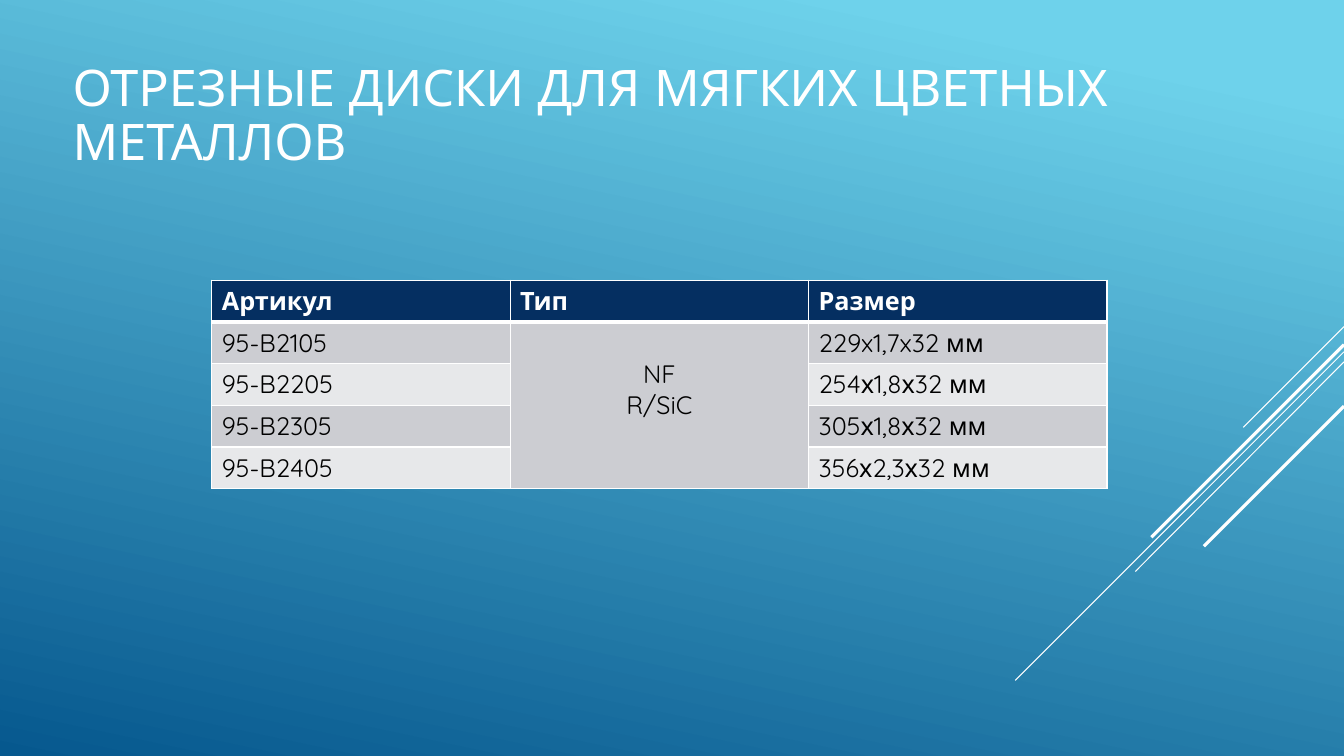
from dataclasses import dataclass

import lxml.etree
import pptx
import pptx.dml.color
import pptx.enum.dml
import pptx.enum.shapes
import pptx.enum.text
import pptx.oxml.ns
import pptx.util

Inches = pptx.util.Inches
Pt = pptx.util.Pt
qn = pptx.oxml.ns.qn


@dataclass(frozen=True)
class Theme:
    font: str = "Quicksand"
    white: str = "FFFFFF"
    black: str = "000000"
    sky: str = "6ED2EB"
    ocean: str = "06588E"
    header: str = "052F61"
    band_dark: str = "CCCDD2"
    band_light: str = "E7E8EA"
    title_size: int = 36
    table_size: int = 18
    thin: float = 0.75
    thick: float = 2.25
    border: int = 1
    header_border: int = 3


def rgb(value):
    return pptx.dml.color.RGBColor.from_string(value)


class SlideBuilder:
    def __init__(self, deck, theme):
        self.theme = theme
        self.page = deck.slides.add_slide(deck.slide_layouts[5])

    def background(self):
        fill = self.page.background.fill
        fill.gradient()
        fill.gradient_angle = 258
        stops = ((0.1, self.theme.sky), (1, self.theme.ocean))
        for stop, (position, color) in zip(fill.gradient_stops, stops):
            stop.position = position
            stop.color.rgb = rgb(color)

    def line(self, start, end, width):
        line = self.page.shapes.add_connector(
            pptx.enum.shapes.MSO_CONNECTOR.STRAIGHT,
            *(Inches(value) for value in (*start, *end)))
        line.line.color.rgb = rgb(self.theme.white)
        line.line.width = Pt(width)
        lxml.etree.SubElement(line._element.spPr, qn("a:effectLst"))

    def add_span(self, para, text, size, color, bold=False):
        span = para.add_run()
        span.text = text
        span.font.name = self.theme.font
        span.font.size = Pt(size)
        span.font.bold = bold
        span.font.color.rgb = rgb(color)

    def title(self, text, left, top, width, height):
        box = self.page.shapes.title
        box.left, box.top = Inches(left), Inches(top)
        box.width, box.height = Inches(width), Inches(height)
        frame = box.text_frame
        frame.word_wrap = True
        frame.auto_size = pptx.enum.text.MSO_AUTO_SIZE.NONE
        frame.vertical_anchor = pptx.enum.text.MSO_ANCHOR.TOP
        para = frame.paragraphs[0]
        para.alignment = pptx.enum.text.PP_ALIGN.LEFT
        para.line_spacing = 0.9
        self.add_span(para, text, self.theme.title_size, self.theme.white)

    def borders(self, cell, row):
        """Outline a cell, with a heavier rule between header and body."""
        heavy_side = {0: "lnB", 1: "lnT"}.get(row)
        properties = cell._tc.get_or_add_tcPr()
        for index, side in enumerate(("lnL", "lnR", "lnT", "lnB")):
            width = self.theme.header_border if side == heavy_side else self.theme.border
            edge = lxml.etree.Element(qn(f"a:{side}"), w=str(Pt(width)))
            fill = lxml.etree.SubElement(edge, qn("a:solidFill"))
            lxml.etree.SubElement(fill, qn("a:srgbClr"), val=self.theme.white)
            properties.insert(index, edge)

    def cell(self, cell, row, lines, centered=False):
        theme = self.theme
        is_header = row == 0
        band = theme.band_dark if row % 2 else theme.band_light
        cell.fill.solid()
        cell.fill.fore_color.rgb = rgb(theme.header if is_header else band)
        self.borders(cell, row)
        frame = cell.text_frame
        for index, text in enumerate(lines):
            para = frame.add_paragraph() if index else frame.paragraphs[0]
            if centered:
                para.alignment = pptx.enum.text.PP_ALIGN.CENTER
            self.add_span(para, text, theme.table_size,
                          theme.white if is_header else theme.black, is_header)

    def product_table(self, headers, products, type_lines, left, top,
                      column_width, row_height):
        """Draw article and size columns around one merged type cell."""
        row_count = len(products) + 1
        table = self.page.shapes.add_table(
            row_count, len(headers), Inches(left), Inches(top),
            Inches(column_width * len(headers)), Inches(row_height * row_count)).table
        table.horz_banding = False
        for column in table.columns:
            column.width = Inches(column_width)
        for row in table.rows:
            row.height = Inches(row_height)
        for column, header in enumerate(headers):
            self.cell(table.cell(0, column), 0, [header])
        for row, (article, size) in enumerate(products, start=1):
            self.cell(table.cell(row, 0), row, [article])
            self.cell(table.cell(row, 2), row, [size])
        type_cell = table.cell(1, 1)
        type_cell.merge(table.cell(row_count - 1, 1))
        self.cell(type_cell, 1, type_lines, centered=True)
        type_cell.margin_top = Inches(0.36)


def main():
    theme = Theme()
    deck = pptx.Presentation()
    deck.slide_width, deck.slide_height = Inches(13.33), Inches(7.5)
    slide = SlideBuilder(deck, theme)
    slide.background()

    right_edge = 13.33
    diagonals = (
        (3.24, 12.33, 4.24, theme.thin),
        (3.49, 10.07, 6.75, theme.thin),
        (3.59, 11.26, 5.67, theme.thin),
        (3.42, 11.42, 5.33, theme.thick),
        (4.03, 11.94, 5.42, theme.thick),
    )
    for start_y, end_x, end_y, width in diagonals:
        slide.line((right_edge, start_y), (end_x, end_y), width)

    slide.title("ОТРЕЗНЫЕ ДИСКИ ДЛЯ МЯГКИХ ЦВЕТНЫХ МЕТАЛЛОВ",
                0.62, 0.57, 12.95, 1.65)
    slide.product_table(
        headers=("Артикул", "Тип", "Размер"),
        products=(
            ("95-B2105", "229x1,7x32 мм"),
            ("95-B2205", "254х1,8х32 мм"),
            ("95-B2305", "305х1,8х32 мм"),
            ("95-B2405", "356х2,3х32 мм"),
        ),
        type_lines=("NF", "R/SiC"),
        left=2.1, top=2.78, column_width=2.96, row_height=0.41)
    deck.save("out.pptx")


if __name__ == "__main__":
    main()
